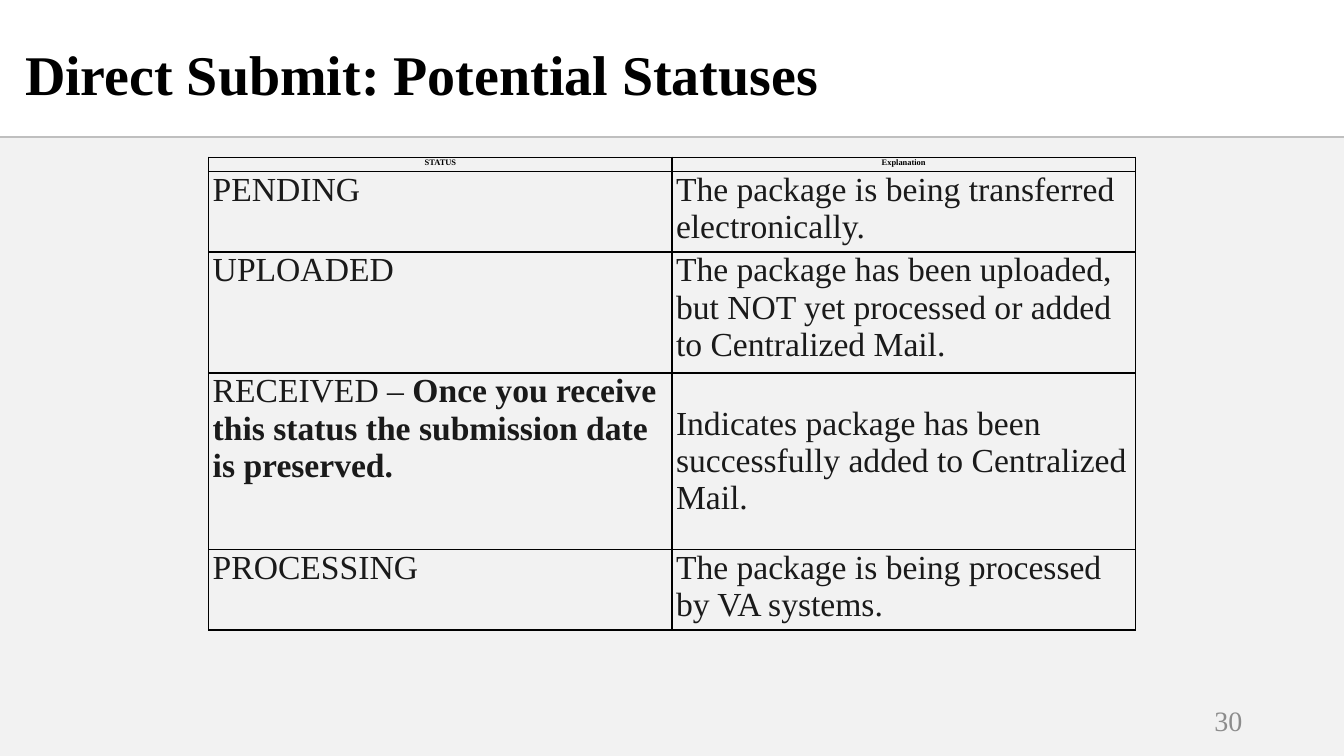
from lxml import etree
from pptx import Presentation
from pptx import util as u
from pptx.dml.color import RGBColor
from pptx.enum import shapes, text
from pptx.oxml import ns

FONT = "Times New Roman"
COLORS = {
    "panel": "F2F2F2",
    "rule": "BFBFBF",
    "black": "000000",
    "body": "1A1A1A",
    "number": "8C8C8C",
}
HEADER = ("STATUS", "Explanation")
STATUSES = [
    (["PENDING"], "The package is being transferred electronically."),
    (["UPLOADED"], "The package has been uploaded, but NOT yet processed "
                   "or added to Centralized Mail."),
    (["RECEIVED – ", "Once you receive this status the submission date is preserved."],
     "Indicates package has been successfully added to Centralized Mail."),
    (["PROCESSING"], "The package is being processed by VA systems."),
]
ROW_HEIGHTS = (0.14, 0.74, 1.1, 1.75, 0.77)
RECEIVED_ROW = 3


def rgb(name):
    return RGBColor.from_string(COLORS[name])


def add_run(p, content, size, color, bold=False):
    r = p.add_run()
    r.text = content
    r.font.name = FONT
    r.font.size = u.Pt(size)
    r.font.bold = bold
    r.font.color.rgb = rgb(color)


def add_label(s, box, content, size, color, align, bold=False):
    tf = s.shapes.add_textbox(*map(u.Inches, box)).text_frame
    tf.word_wrap = True
    tf.vertical_anchor = text.MSO_ANCHOR.MIDDLE
    p = tf.paragraphs[0]
    p.alignment = align
    add_run(p, content, size, color, bold)
    return p


def add_backdrop(s, left, top, width, height):
    sp = s.shapes.add_shape(shapes.MSO_SHAPE.RECTANGLE,
                            *map(u.Inches, (left, top, width, height)))
    sp.shadow.inherit = False
    sp.fill.solid()
    sp.fill.fore_color.rgb = rgb("panel")
    sp.line.fill.background()
    rule = s.shapes.add_connector(shapes.MSO_CONNECTOR.STRAIGHT,
                                  *map(u.Inches, (left, top, left + width, top)))
    rule.line.color.rgb = rgb("rule")
    rule.line.width = u.Pt(1.5)
    etree.SubElement(rule.element.spPr, ns.qn("a:effectLst"))


def add_borders(cell):
    tcPr = cell._tc.get_or_add_tcPr()
    for i, side in enumerate(("lnL", "lnR", "lnT", "lnB")):
        ln = etree.Element(ns.qn(f"a:{side}"), w=str(u.Pt(1)))
        fill = etree.SubElement(ln, ns.qn("a:solidFill"))
        etree.SubElement(fill, ns.qn("a:srgbClr"), val=COLORS["black"])
        tcPr.insert(i, ln)


def add_status_table(s, left, top, width):
    box = (left, top, width, sum(ROW_HEIGHTS))
    table = s.shapes.add_table(len(ROW_HEIGHTS), len(HEADER),
                               *map(u.Inches, box)).table
    table.first_row = table.horz_banding = False
    for row, height in zip(table.rows, ROW_HEIGHTS):
        row.height = u.Inches(height)
    for cell in table.iter_cells():
        cell.margin_left = cell.margin_right = u.Inches(0.04)
        cell.margin_top = cell.margin_bottom = 0
        cell.fill.background()
        add_borders(cell)
    for col, heading in enumerate(HEADER):
        p = table.cell(0, col).text_frame.paragraphs[0]
        p.alignment = text.PP_ALIGN.CENTER
        p.line_spacing = 1.07
        add_run(p, heading, 6, "black", True)
    for row, (status, explanation) in enumerate(STATUSES, 1):
        for col, parts in enumerate((status, [explanation])):
            p = table.cell(row, col).text_frame.paragraphs[0]
            for i, part in enumerate(parts):
                add_run(p, part, 24, "body", i > 0)
    table.cell(RECEIVED_ROW, 1).vertical_anchor = text.MSO_ANCHOR.MIDDLE


def main():
    prs = Presentation()
    prs.slide_width = u.Inches(13.33)
    prs.slide_height = u.Inches(7.5)
    s = prs.slides.add_slide(prs.slide_layouts[6])
    add_backdrop(s, 0, 1.36, 13.33, 6.14)
    title = add_label(s, (0.15, 0.21, 9.59, 1.11), "Direct Submit: Potential Statuses",
                      40, "black", text.PP_ALIGN.LEFT, True)
    title.line_spacing = 0.9
    add_status_table(s, 2.07, 1.56, 9.19)
    add_label(s, (9.42, 6.95, 3, 0.4), "30", 20, "number", text.PP_ALIGN.RIGHT)
    prs.save("out.pptx")


if __name__ == "__main__":
    main()
